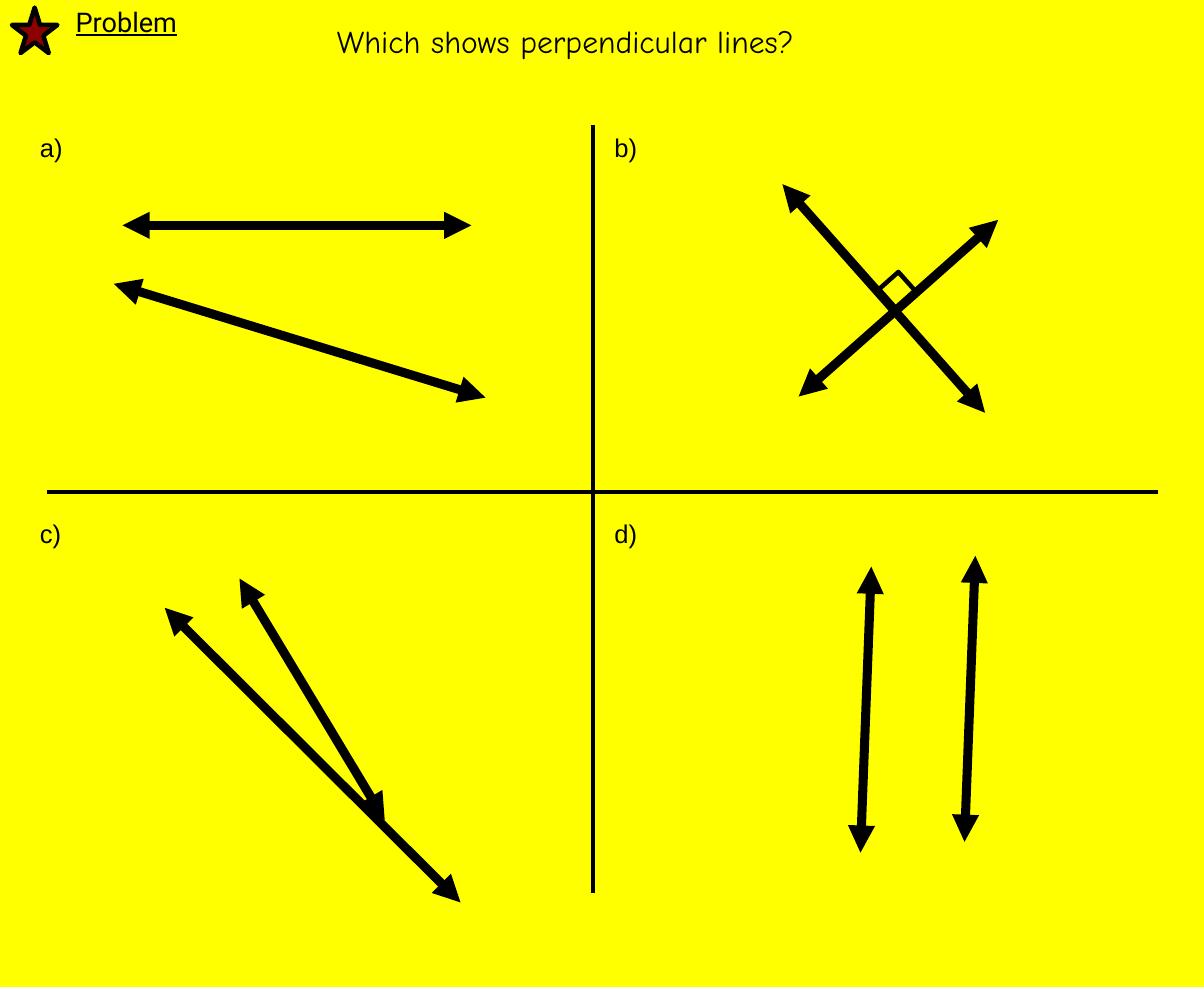
import pptx
import pptx.dml.color
import pptx.enum.shapes
import pptx.oxml.ns
import pptx.util
from lxml import etree

Inches = pptx.util.Inches
Pt = pptx.util.Pt
SHAPES = pptx.enum.shapes.MSO_SHAPE

COLOURS = {"background": "FFFF00", "ink": "000000", "star": "8B0000"}
HEADING = {"size": Pt(18), "name": "Roboto", "underline": True}
QUESTION = {"size": Pt(21), "name": "Comic Neue"}
LABEL = {"size": Pt(17), "name": "Arial"}

COLUMNS = (0.27, 5.57)
ROWS = (1.17, 4.73)

# Line ends (x1, y1, x2, y2) in inches from the corner of each answer's panel
ANSWERS = {
    "a)": [(0.86, 0.91, 4.08, 0.91), (0.78, 1.45, 4.21, 2.5)],
    "b)": [(3.64, 0.86, 1.8, 2.49), (1.65, 0.53, 3.52, 2.64)],
    "c)": [(1.94, 0.61, 3.28, 2.84), (1.25, 0.88, 3.98, 3.6)],
    "d)": [(2.37, 3.14, 2.47, 0.5), (3.33, 3.04, 3.43, 0.4)],
}


def colour(name):
    return pptx.dml.color.RGBColor.from_string(COLOURS[name])


def add_text(slide, text, box, font_format):
    textbox = slide.shapes.add_textbox(*map(Inches, box))
    textbox.text_frame.word_wrap = True
    run = textbox.text_frame.paragraphs[0].add_run()
    run.text = text
    run.font.color.rgb = colour("ink")
    for attribute, value in font_format.items():
        setattr(run.font, attribute, value)


def add_line(slide, ends, width, arrows=False):
    line = slide.shapes.add_connector(
        pptx.enum.shapes.MSO_CONNECTOR.STRAIGHT, *map(Inches, ends))
    line.line.color.rgb = colour("ink")
    line.line.width = Pt(width)
    if arrows:
        outline = line.line._get_or_add_ln()
        for end in ("a:headEnd", "a:tailEnd"):
            etree.SubElement(outline, pptx.oxml.ns.qn(end), type="triangle")
    etree.SubElement(line._element.spPr, pptx.oxml.ns.qn("a:effectLst"))


def add_outlined(slide, preset, box, fill=None, rotation=0):
    """Add a preset shape with a 3 pt ink outline, unfilled by default."""
    shape = slide.shapes.add_shape(preset, *map(Inches, box))
    shape.shadow.inherit = False
    shape.rotation = rotation
    shape.line.color.rgb = colour("ink")
    shape.line.width = Pt(3)
    if fill:
        shape.fill.solid()
        shape.fill.fore_color.rgb = colour(fill)
    else:
        shape.fill.background()


def add_header(slide, left, top):
    add_text(slide, "Problem", (left + 0.6, top, 1.73, 0.4), HEADING)
    add_outlined(slide, SHAPES.STAR_5_POINT,
                 (left + 0.11, top + 0.07, 0.42, 0.42), "star")
    add_text(slide, "Which shows perpendicular lines?",
             (left + 3.01, top + 0.15, 6.45, 0.45), QUESTION)


def add_dividers(slide, left, top, width, height):
    middle_x, middle_y = left + 5.04, top + 3.39
    add_line(slide, (middle_x, top, middle_x, top + height), 3)
    add_line(slide, (left, middle_y, left + width, middle_y), 3)


def add_answer(slide, label, left, top):
    add_text(slide, label, (left, top, 0.75, 0.39), LABEL)
    for x1, y1, x2, y2 in ANSWERS[label]:
        add_line(slide, (left + x1, top + y1, left + x2, top + y2), 6, True)
    if label == "b)":
        right_angle = (left + 2.59, top + 1.39, 0.24, 0.24)
        add_outlined(slide, SHAPES.RECTANGLE, right_angle, rotation=48.3)


def main():
    deck = pptx.Presentation()
    deck.slide_width, deck.slide_height = Inches(11.11), Inches(9.11)
    slide = deck.slides.add_slide(deck.slide_layouts[6])
    slide.background.fill.solid()
    slide.background.fill.fore_color.rgb = colour("background")

    add_header(slide, 0, 0)
    add_dividers(slide, 0.43, 1.15, 10.26, 7.09)
    for index, label in enumerate(ANSWERS):
        row, column = divmod(index, 2)
        add_answer(slide, label, COLUMNS[column], ROWS[row])
    deck.save("out.pptx")


if __name__ == "__main__":
    main()
